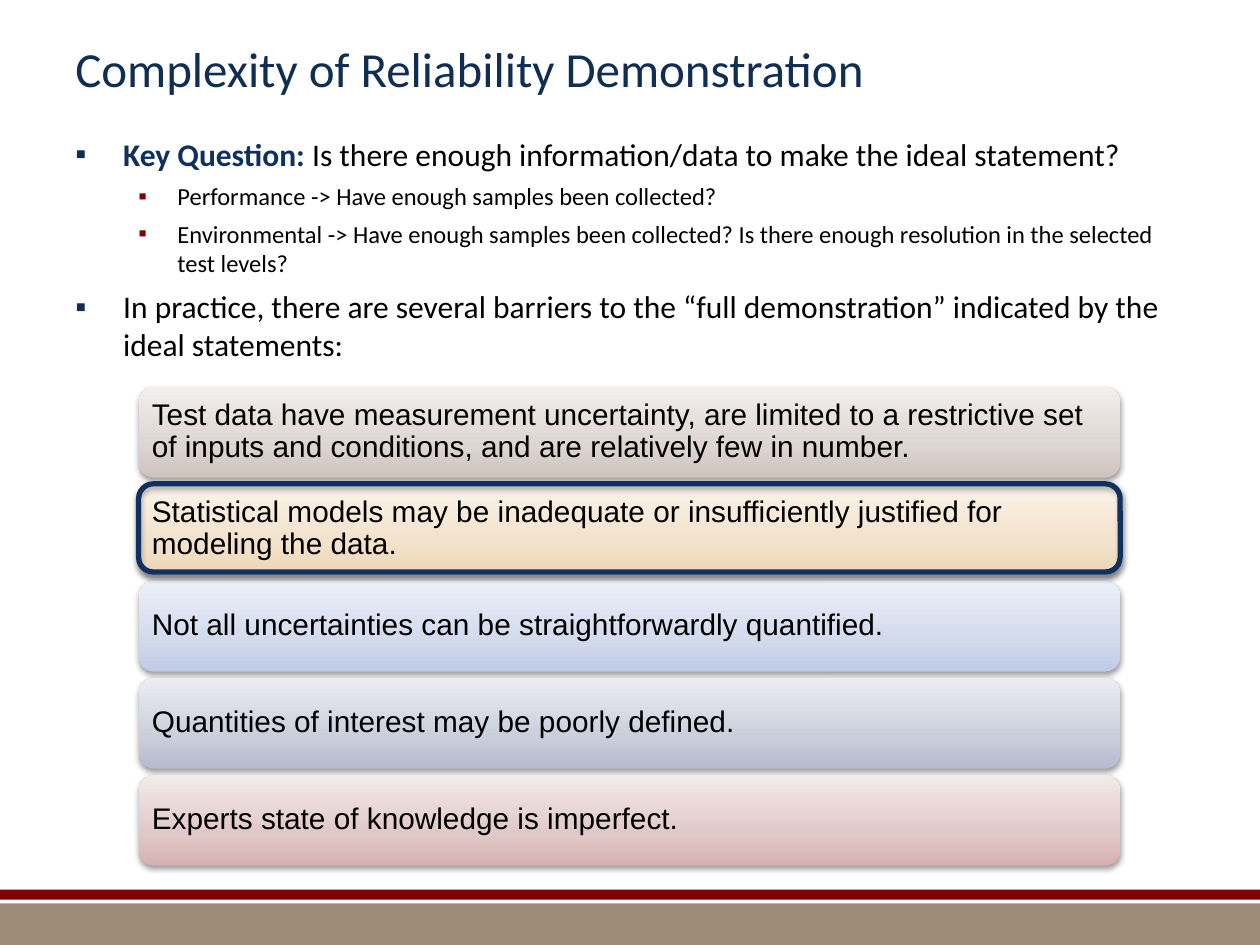
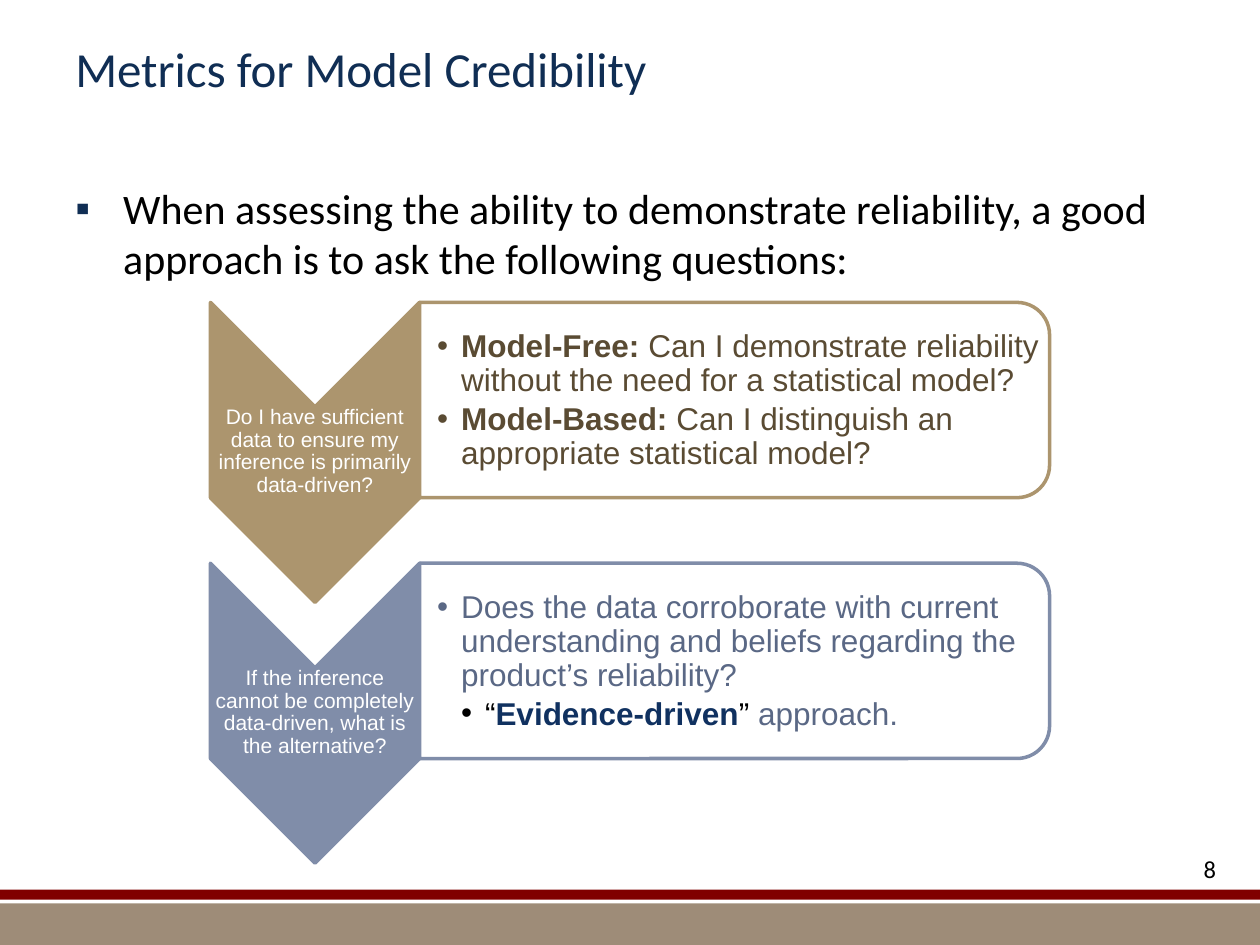
from copy import deepcopy
from dataclasses import dataclass

from lxml.etree import SubElement
from pptx import Presentation
from pptx.dml.color import RGBColor
from pptx.enum.shapes import MSO_SHAPE
from pptx.enum.text import MSO_ANCHOR, PP_ALIGN
from pptx.oxml.ns import qn
from pptx.util import Inches, Pt


@dataclass(frozen=True)
class Theme:
    heading_font: str = "Calibri"
    diagram_font: str = "Arial"
    title: str = "102E54"
    accent: str = "103160"
    maroon: str = "800000"
    taupe: str = "9E8C78"
    text: str = "000000"
    white: str = "FFFFFF"
    title_size: int = 28
    lead_size: int = 24
    body_size: int = 18
    card_size: int = 17
    detail_size: int = 14
    chevron_size: int = 12


THEME = Theme()

BANDS = [
    (7.17, 0.33, THEME.taupe),
    (7.06, 0.08, THEME.maroon),
]

BARRIERS_TITLE = "Complexity of Reliability Demonstration"
BARRIERS_BODY = [
    (0, THEME.body_size, [
        ("Key Question: ", THEME.accent, True),
        ("Is there enough information/data to make the ideal statement?", THEME.text, False),
    ]),
    (1, THEME.detail_size, [
        ("Performance -> Have enough samples been collected?", THEME.text, False),
    ]),
    (1, THEME.detail_size, [
        ("Environmental -> Have enough samples been collected? Is there enough "
         "resolution in the selected test levels?", THEME.text, False),
    ]),
    (0, THEME.body_size, [
        ("In practice, there are several barriers to the “full demonstration” "
         "indicated by the ideal statements:", THEME.text, False),
    ]),
]
BARRIERS = [
    ("Test data have measurement uncertainty, are limited to a restrictive set of inputs "
     "and conditions, and are relatively few in number.", ("CFC3BD", "DDD5D1", "F2EFED")),
    ("Statistical models may be inadequate or insufficiently justified for modeling the data.",
     ("EDD6B5", "F2E1CB", "FBF4EA")),
    ("Not all uncertainties can be straightforwardly quantified.",
     ("C0CBE7", "D2DAED", "EDF0F9")),
    ("Quantities of interest may be poorly defined.", ("B5BACD", "CBCFDC", "EBEDF2")),
    ("Experts state of knowledge is imperfect.", ("D6B0B0", "E1C8C8", "F4EAEA")),
]
HIGHLIGHTED_BARRIER = 1
GRADIENT_POSITIONS = (0, 0.35, 1)

METRICS_TITLE = "Metrics for Model Credibility"
METRICS_BODY = [
    (0, THEME.lead_size, [
        ("When assessing the ability to demonstrate reliability, a good approach is to ask "
         "the following questions:", THEME.text, False),
    ]),
]
BROWN, SLATE = "5A4B33", "5A6885"
QUESTIONS = [
    ("Do I have sufficient data to ensure my inference is primarily data-driven?", "AC956E", [
        (0, [("Model-Free: ", BROWN, True),
             ("Can I demonstrate reliability without the need for a statistical model?",
              BROWN, False)]),
        (0, [("Model-Based: ", BROWN, True),
             ("Can I distinguish an appropriate statistical model?", BROWN, False)]),
    ]),
    ("If the inference cannot be completely data-driven, what is the alternative?", "808DA9", [
        (0, [("Does the data corroborate with current understanding and beliefs regarding "
              "the product’s reliability?", SLATE, False)]),
        (1, [("“", THEME.text, False), ("Evidence-driven", THEME.accent, True),
             ("” ", THEME.text, False), ("approach.", SLATE, False)]),
    ]),
]
PAGE_NUMBER = "8"

BODY_LEVELS = [(0.38, 0.38, THEME.title), (0.81, 0.31, THEME.maroon)]


def apply_format(target, values):
    for name, value in values.items():
        setattr(target, name, value)


def rgb(color):
    return RGBColor.from_string(color)


def box(left, top, width, height):
    return [Inches(value) for value in (left, top, width, height)]


def setup_frame(shape, margins=(0.1, 0.05, 0.1, 0.05), anchor=MSO_ANCHOR.TOP):
    sides = ("margin_left", "margin_top", "margin_right", "margin_bottom")
    values = {side: Inches(margin) for side, margin in zip(sides, margins)}
    apply_format(shape.text_frame, values | {"word_wrap": True, "vertical_anchor": anchor})
    return shape.text_frame


def add_text_box(slide, position, **frame_format):
    return setup_frame(slide.shapes.add_textbox(*box(*position)), **frame_format)


def add_paragraph(frame, runs, size, font, **paragraph_format):
    first = frame.paragraphs[0]
    paragraph = frame.add_paragraph() if first.runs else first
    apply_format(paragraph, paragraph_format)
    for text, color, bold in runs:
        run = paragraph.add_run()
        run.text = text
        apply_format(run.font, {"name": font, "size": Pt(size), "bold": bold})
        run.font.color.rgb = rgb(color)
    return paragraph


def add_bullet(paragraph, character, indent, hanging, color=None):
    properties = paragraph._p.get_or_add_pPr()
    properties.set("marL", str(Inches(indent)))
    properties.set("indent", str(-Inches(hanging)))
    if color:
        SubElement(SubElement(properties, qn("a:buClr")), qn("a:srgbClr"), val=color)
    SubElement(properties, qn("a:buFont"), typeface=THEME.diagram_font)
    SubElement(properties, qn("a:buChar"), char=character)


def add_shape(slide, kind, position, fill=None, line=None, line_width=2):
    shape = slide.shapes.add_shape(kind, *box(*position))
    shape.shadow.inherit = False
    if fill:
        shape.fill.solid()
        shape.fill.fore_color.rgb = rgb(fill)
    else:
        shape.fill.background()
    if line:
        shape.line.color.rgb = rgb(line)
        shape.line.width = Pt(line_width)
    else:
        shape.line.fill.background()
    return shape


def add_turned_shape(slide, kind, position, **style):
    left, top, width, height = position
    shift = (width - height) / 2
    shape = add_shape(slide, kind, (left + shift, top - shift, height, width), **style)
    shape.rotation = 90


def add_shadow(shape, opacity, distance):
    effects = shape.element.spPr.find(qn("a:effectLst"))
    shadow = SubElement(effects, qn("a:outerShdw"), blurRad=str(Pt(3.1)),
                        dist=str(Pt(distance)), dir="5400000", rotWithShape="0")
    color = SubElement(shadow, qn("a:srgbClr"), val=THEME.text)
    SubElement(color, qn("a:alpha"), val=str(opacity * 1000))


def fill_gradient(shape, colors):
    shape.fill.gradient()
    shape.fill.gradient_angle = 90
    stop_list = shape.element.spPr.find(qn("a:gradFill")).find(qn("a:gsLst"))
    stop_list.append(deepcopy(stop_list[0]))
    for stop, position, color in zip(shape.fill.gradient_stops, GRADIENT_POSITIONS, colors):
        stop.position = position
        stop.color.rgb = rgb(color)


def add_base_slide(presentation, title, body, body_top):
    slide = presentation.slides.add_slide(presentation.slide_layouts[6])
    for top, height, color in BANDS:
        add_shape(slide, MSO_SHAPE.RECTANGLE, (0, top, 10, height), fill=color)
    title_frame = add_text_box(slide, (0.5, 0, 9, 1.08), anchor=MSO_ANCHOR.MIDDLE)
    add_paragraph(title_frame, [(title, THEME.title, False)], THEME.title_size,
                  THEME.heading_font)
    body_frame = add_text_box(slide, (0.5, body_top, 9, 5.3))
    for index, (level, size, runs) in enumerate(body):
        paragraph = add_paragraph(body_frame, runs, size, THEME.heading_font,
                                  space_before=Pt(size * 0.2 if index else 0),
                                  space_after=Pt(2))
        add_bullet(paragraph, "▪", *BODY_LEVELS[level])
    return slide


def build_barriers(presentation):
    slide = add_base_slide(presentation, BARRIERS_TITLE, BARRIERS_BODY, 1.02)
    left, first_top, width, height, pitch = 1.1, 3.07, 7.79, 0.72, 0.77
    for index, (text, colors) in enumerate(BARRIERS):
        card = add_shape(slide, MSO_SHAPE.ROUNDED_RECTANGLE,
                         (left, first_top + index * pitch, width, height))
        fill_gradient(card, colors)
        add_shadow(card, 38, 1.6)
        frame = setup_frame(card, (0.07,) * 4, MSO_ANCHOR.MIDDLE)
        add_paragraph(frame, [(text, THEME.text, False)], THEME.card_size,
                      THEME.diagram_font, alignment=PP_ALIGN.LEFT, line_spacing=0.9)
    highlight_top = first_top + HIGHLIGHTED_BARRIER * pitch
    highlight = add_shape(slide, MSO_SHAPE.ROUNDED_RECTANGLE,
                          (left, highlight_top, width, 0.7), line=THEME.accent, line_width=3)
    add_shadow(highlight, 35, 1.8)


def build_metrics(presentation):
    slide = add_base_slide(presentation, METRICS_TITLE, METRICS_BODY, 1.4)
    number_frame = add_text_box(slide, (9.08, 6.73, 0.67, 0.41))
    add_paragraph(number_frame, [(PAGE_NUMBER, THEME.text, False)], THEME.detail_size,
                  THEME.heading_font, alignment=PP_ALIGN.RIGHT)
    left, first_top, pitch, chevron_width = 1.67, 2.4, 2.07, 1.66
    answer_left = left + chevron_width
    for index, (question, color, answers) in enumerate(QUESTIONS):
        top = first_top + index * pitch
        add_turned_shape(slide, MSO_SHAPE.CHEVRON, (left, top, chevron_width, 2.38),
                         fill=color, line=color)
        question_frame = add_text_box(slide, (left, top + 0.83, chevron_width, 0.71),
                                      margins=(0.01,) * 4, anchor=MSO_ANCHOR.MIDDLE)
        add_paragraph(question_frame, [(question, THEME.white, False)], THEME.chevron_size,
                      THEME.diagram_font, alignment=PP_ALIGN.CENTER, line_spacing=0.9)
        add_turned_shape(slide, MSO_SHAPE.ROUND_2_SAME_RECTANGLE,
                         (answer_left, top, 5, 1.55), fill=THEME.white, line=color)
        answer_frame = add_text_box(slide, (answer_left, top + 0.08, 4.93, 1.4),
                                    margins=(0.14, 0.01, 0.01, 0.01),
                                    anchor=MSO_ANCHOR.MIDDLE)
        for level, runs in answers:
            paragraph = add_paragraph(answer_frame, runs, THEME.body_size,
                                      THEME.diagram_font, line_spacing=0.9,
                                      space_after=Pt(2.7))
            add_bullet(paragraph, "•", 0.19 * (level + 1), 0.19)


def main():
    presentation = Presentation()
    apply_format(presentation, {"slide_width": Inches(10), "slide_height": Inches(7.5)})
    build_barriers(presentation)
    build_metrics(presentation)
    presentation.save("out.pptx")


if __name__ == "__main__":
    main()
